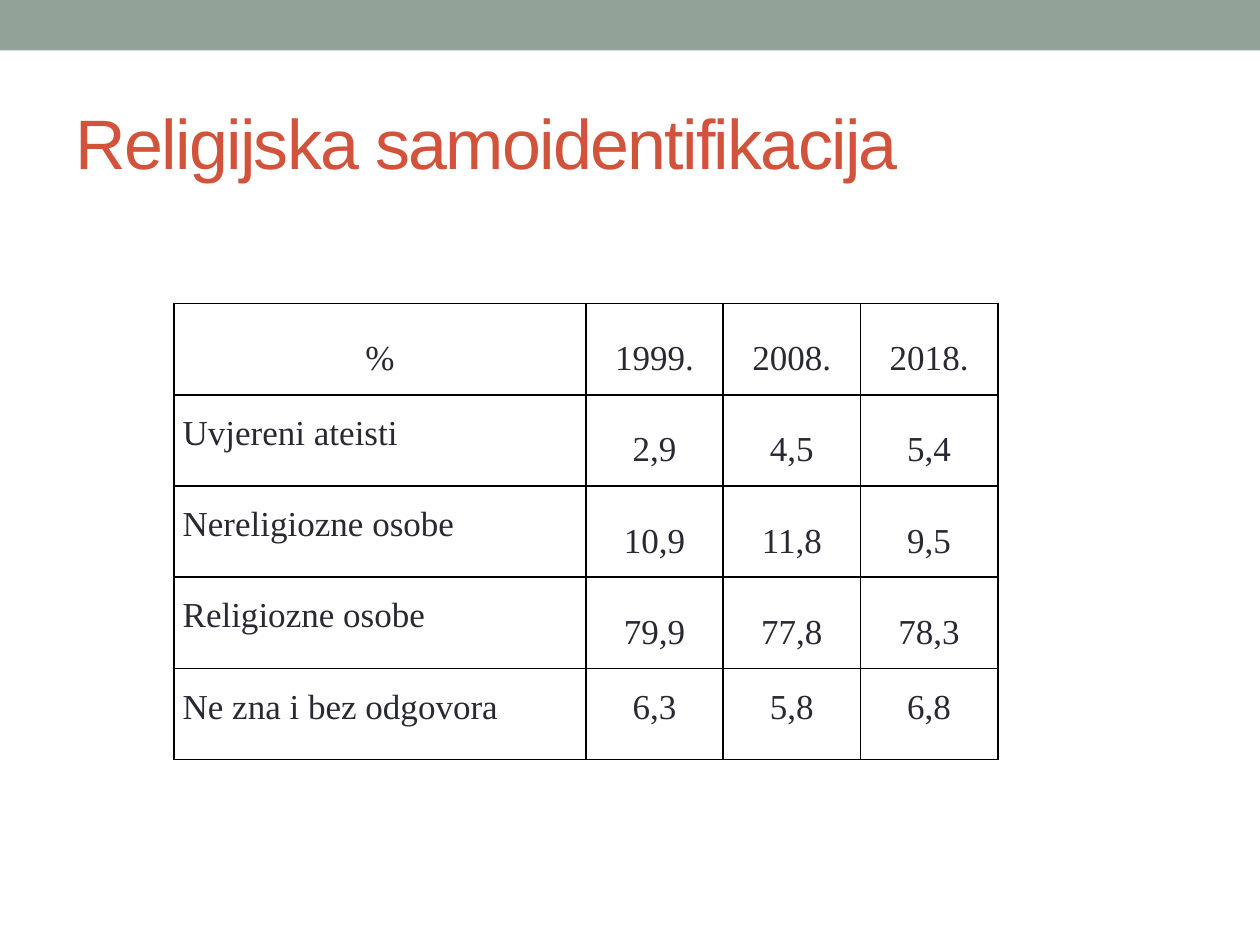
from lxml import etree
from pptx import Presentation
from pptx.dml.color import RGBColor
from pptx.enum.shapes import MSO_SHAPE
from pptx.enum.text import MSO_ANCHOR, PP_ALIGN
from pptx.oxml.ns import qn
from pptx.util import Inches, Pt

TOP, MIDDLE = MSO_ANCHOR.TOP, MSO_ANCHOR.MIDDLE
LEFT, CENTER, JUSTIFY = PP_ALIGN.LEFT, PP_ALIGN.CENTER, PP_ALIGN.JUSTIFY
RECTANGLE = MSO_SHAPE.RECTANGLE


def write(frame, text, font, size, color, align, spacing=None, before=None, tracking=None):
    paragraph = frame.paragraphs[0]
    paragraph.alignment = align
    if spacing is not None:
        paragraph.line_spacing = spacing
    if before is not None:
        paragraph.space_before = Pt(before)
    run = paragraph.add_run()
    run.text = text
    run.font.name, run.font.size = font, Pt(size)
    run.font.color.rgb = RGBColor.from_string(color)
    if tracking is not None:
        run._r.get_or_add_rPr().set("spc", str(tracking * 100))


def outline(cell, color, width):
    properties = cell._tc.get_or_add_tcPr()
    for position, side in enumerate(("a:lnL", "a:lnR", "a:lnT", "a:lnB")):
        line = etree.Element(qn(side), w=str(Pt(width)))
        fill = etree.SubElement(line, qn("a:solidFill"))
        etree.SubElement(fill, qn("a:srgbClr"), val=color)
        properties.insert(position, line)


prs = Presentation()
prs.slide_width, prs.slide_height = Inches(10), Inches(7.5)
slide = prs.slides.add_slide(prs.slide_layouts[5])

# Top band
band = slide.shapes.add_shape(RECTANGLE, 0, 0, prs.slide_width, Inches(0.4))
band.shadow.inherit = False
band.fill.solid()
band.fill.fore_color.rgb = RGBColor.from_string("93A299")
band.line.fill.background()

# Title
title = slide.shapes.title
title.left, title.top = Inches(0.5), Inches(0.58)
title.width, title.height = Inches(9), Inches(1.08)
title.text_frame.vertical_anchor = MIDDLE
write(title.text_frame, "Religijska samoidentifikacija", font="Arial", size=40,
      color="D2533C", align=LEFT, tracking=-1)

# Survey table: the label column is three year columns wide
answers = [
    ("%", "1999.", "2008.", "2018."),
    ("Uvjereni ateisti", "2,9", "4,5", "5,4"),
    ("Nereligiozne osobe", "10,9", "11,8", "9,5"),
    ("Religiozne osobe", "79,9", "77,8", "78,3"),
    ("Ne zna i bez odgovora", "6,3", "5,8", "6,8"),
]
column_shares = (3, 1, 1, 1)
table_width, table_height = Inches(6.54), Inches(3.62)
survey = slide.shapes.add_table(len(answers), len(column_shares), Inches(1.38), Inches(2.41),
                                table_width, table_height).table
survey.first_row = survey.horz_banding = False
for column, share in zip(survey.columns, column_shares):
    column.width = table_width * share // sum(column_shares)

last_row = len(answers) - 1
for r, answer in enumerate(answers):
    survey.rows[r].height = table_height // len(answers)
    for c, text in enumerate(answer):
        cell = survey.cell(r, c)
        is_label = r > 0 and c == 0
        cell.fill.background()
        cell.margin_left = cell.margin_right = Inches(0.07)
        cell.margin_top = cell.margin_bottom = 0
        cell.vertical_anchor = TOP if is_label or r == last_row else MIDDLE
        write(cell.text_frame, text, font="Times New Roman", size=20, color="292934",
              align=JUSTIFY if is_label else CENTER, spacing=1.5, before=6)
        outline(cell, "000000", 1)

prs.save("out.pptx")
